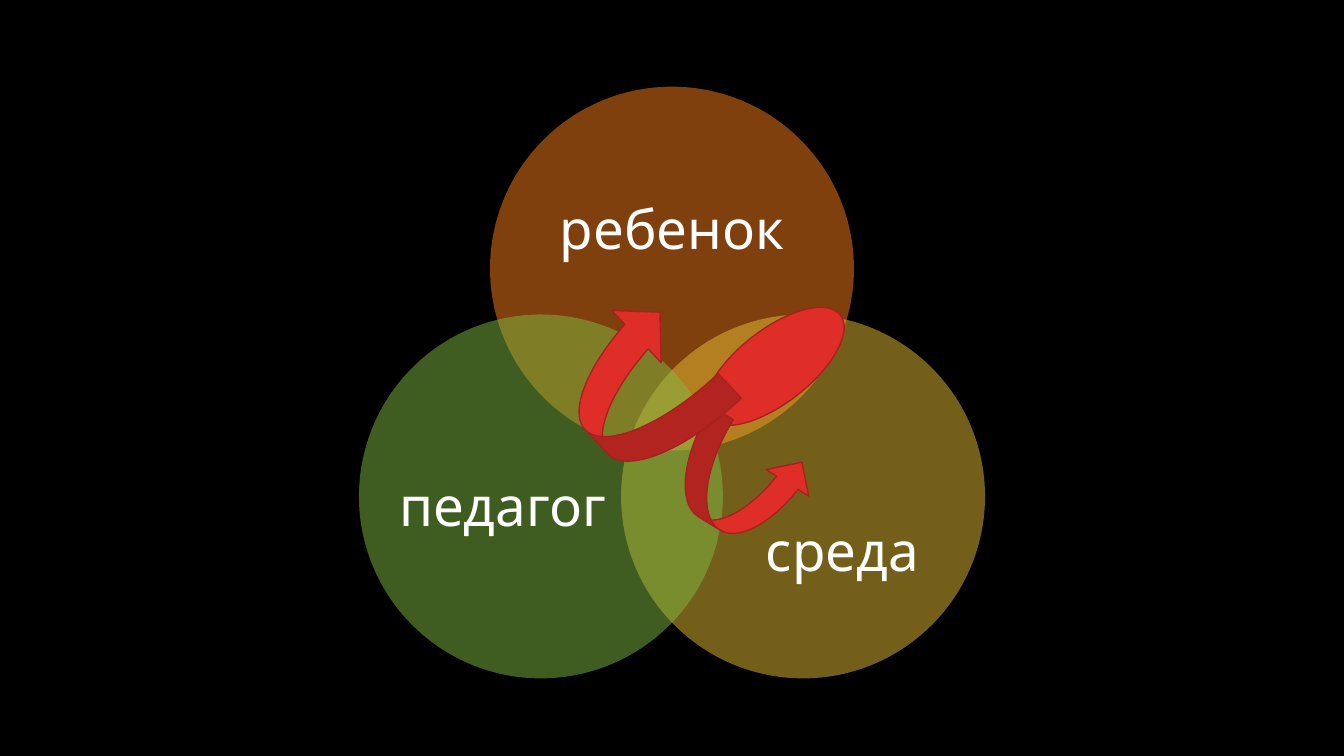
"""Build a slide with three overlapping circles and red arrows linking them."""
from lxml import etree
from pptx import Presentation
from pptx.dml.color import RGBColor
from pptx.enum import shapes, text
from pptx.oxml import ns
from pptx.util import Inches, Pt

THEME = {
    "background": "000000", "text": "FFFFFF", "arrow": "DF2E28", "arrow_line": "A5221E",
    "font": "Quicksand", "label_size": 39, "line_width": 1, "circle_alpha": 50,
}
DIAMETER = 3.61
CIRCLES = [
    {"label": "ребенок", "color": "FE801A", "at": (4.86, 0.86), "box": (5.34, 1.49, 2.65, 1.62)},
    {"label": "среда", "color": "E9BF35", "at": (6.16, 3.12), "box": (7.27, 4.5, 2.17, 1.99)},
    {"label": "педагог", "color": "81BB42", "at": (3.56, 3.12), "box": (3.9, 4.05, 2.17, 1.99)},
]
KIND = shapes.MSO_SHAPE
RED_SHAPES = [
    (KIND.OVAL, (6.85, 3.27, 1.66, 0.73), 142.1, ()),
    (KIND.CURVED_UP_ARROW, (6.7, 4.3, 1.3, 1), 31.8, ()),
    (KIND.CURVED_LEFT_ARROW, (5.67, 3.09, 1.34, 1.53), 136.6, (0.25, 0.53, 0.25)),
]


def rgb(name):
    return RGBColor.from_string(name)


def add_filled(parent, kind, frame, color):
    sp = parent.add_shape(kind, *map(Inches, frame))
    sp.shadow.inherit = False
    sp.fill.solid()
    sp.fill.fore_color.rgb = rgb(color)
    return sp


def add_circle(parent, circle):
    sp = add_filled(parent, KIND.OVAL, (*circle["at"], DIAMETER, DIAMETER), circle["color"])
    sp.line.fill.background()
    color = sp._element.spPr.find(".//" + ns.qn("a:srgbClr"))
    etree.SubElement(color, ns.qn("a:alpha"), val=str(THEME["circle_alpha"] * 1000))


def add_label(parent, circle):
    tf = parent.add_textbox(*map(Inches, circle["box"])).text_frame
    tf.margin_left = tf.margin_right = tf.margin_top = tf.margin_bottom = 0
    tf.word_wrap = True
    tf.vertical_anchor = text.MSO_ANCHOR.MIDDLE
    tf.text = circle["label"]
    p = tf.paragraphs[0]
    p.alignment = text.PP_ALIGN.CENTER
    p.line_spacing = 0.9
    font = p.runs[0].font
    font.name = THEME["font"]
    font.size = Pt(THEME["label_size"])
    font.color.rgb = rgb(THEME["text"])


def add_red_shape(parent, kind, frame, rotation, adjustments):
    sp = add_filled(parent, kind, frame, THEME["arrow"])
    sp.rotation = rotation
    sp.line.color.rgb = rgb(THEME["arrow_line"])
    sp.line.width = Pt(THEME["line_width"])
    for i, value in enumerate(adjustments):
        sp.adjustments[i] = value


def main():
    prs = Presentation()
    prs.slide_width, prs.slide_height = Inches(13.33), Inches(7.5)
    slide = prs.slides.add_slide(prs.slide_layouts[6])
    slide.background.fill.solid()
    slide.background.fill.fore_color.rgb = rgb(THEME["background"])
    diagram = slide.shapes.add_group_shape().shapes
    for circle in CIRCLES:
        add_circle(diagram, circle)
        add_label(diagram, circle)
    for red_shape in RED_SHAPES:
        add_red_shape(slide.shapes, *red_shape)
    prs.save("out.pptx")


if __name__ == "__main__":
    main()
